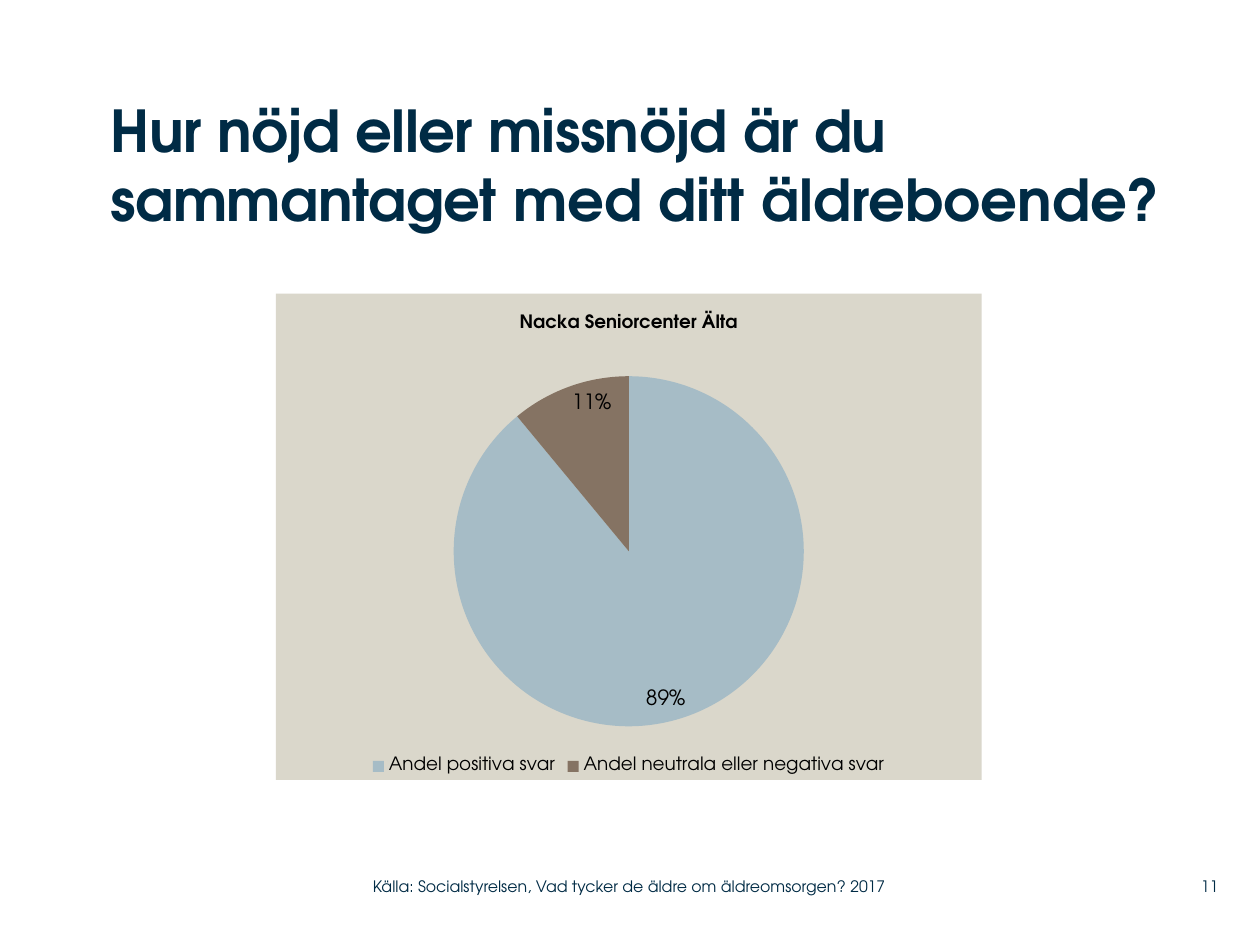
from dataclasses import dataclass

from lxml.etree import SubElement
from pptx import Presentation
from pptx.chart.data import CategoryChartData
from pptx.dml.color import RGBColor
from pptx.enum.chart import XL_CHART_TYPE, XL_LABEL_POSITION, XL_LEGEND_POSITION
from pptx.enum.text import MSO_ANCHOR, PP_ALIGN
from pptx.oxml.ns import qn
from pptx.slide import Slide
from pptx.text.text import Font
from pptx.util import Inches, Pt

NAVY = RGBColor(0x00, 0x2B, 0x45)
BLACK = RGBColor(0x00, 0x00, 0x00)
SAND = RGBColor(0xDA, 0xD7, 0xCB)
POSITIVE_BLUE = RGBColor(0xA6, 0xBC, 0xC6)
NEGATIVE_BROWN = RGBColor(0x85, 0x73, 0x63)
FONT_NAME = "TeX Gyre Adventor"


@dataclass
class Label:
    """A block of text made of spans, each with its letter spacing in points."""

    spans: list[tuple[str, float]]
    left: float
    top: float
    width: float
    height: float
    size: float
    bold: bool = False
    anchor: MSO_ANCHOR = MSO_ANCHOR.MIDDLE
    align: PP_ALIGN = PP_ALIGN.LEFT


@dataclass
class Answer:
    """One slice of the pie."""

    name: str
    share: int
    color: RGBColor


LABELS = [
    Label([("Hur nöjd eller missnöjd är du sammantaget ", -0.3),
           ("med ditt äldreboende?", 0)],
          0.88, 0.75, 8.83, 1.42, 33, bold=True, anchor=MSO_ANCHOR.TOP),
    Label([("Källa: Socialstyrelsen, Vad tycker de äldre om äldreomsorgen? 2017", 0)],
          2.96, 6.89, 4.43, 0.29, 9),
    Label([("11", 0)], 9.2, 6.89, 0.47, 0.29, 9, align=PP_ALIGN.RIGHT),
]
ANSWERS = [
    Answer("Andel positiva svar", 89, POSITIVE_BLUE),
    Answer("Andel neutrala eller negativa svar", 11, NEGATIVE_BROWN),
]


def style_font(font: Font, size: float, color: RGBColor, bold: bool = False) -> None:
    """Apply the common typeface with a size, colour and weight."""
    font.name = FONT_NAME
    font.size = Pt(size)
    font.bold = bold
    font.color.rgb = color


def add_label(page: Slide, label: Label) -> None:
    """Place a text box without margins."""
    box = page.shapes.add_textbox(Inches(label.left), Inches(label.top),
                                  Inches(label.width), Inches(label.height))
    frame = box.text_frame
    frame.word_wrap = True
    frame.vertical_anchor = label.anchor
    frame.margin_left = frame.margin_right = Inches(0)
    frame.margin_top = frame.margin_bottom = Inches(0)
    para = frame.paragraphs[0]
    para.alignment = label.align
    for text, spacing in label.spans:
        span = para.add_run()
        span.text = text
        style_font(span.font, label.size, NAVY, label.bold)
        if spacing:
            span._r.get_or_add_rPr().set("spc", str(round(spacing * 100)))


def add_answer_pie(page: Slide, answers: list[Answer]) -> None:
    """Draw the pie of answers on a sand background."""
    data = CategoryChartData()
    data.categories = [answer.name for answer in answers]
    data.add_series("Series 1", [answer.share for answer in answers])
    chart = page.shapes.add_chart(XL_CHART_TYPE.PIE, Inches(2.19), Inches(2.33),
                                  Inches(5.6), Inches(3.86), data).chart
    style_font(chart.font, 18, BLACK)

    chart.has_title = True
    title = chart.chart_title
    title.include_in_layout = False
    title.text_frame.text = "Nacka Seniorcenter Älta"
    style_font(title.text_frame.paragraphs[0].runs[0].font, 10.5, BLACK, bold=True)

    chart.has_legend = True
    chart.legend.position = XL_LEGEND_POSITION.BOTTOM
    chart.legend.include_in_layout = False
    style_font(chart.legend.font, 10.5, BLACK)

    plot = chart.plots[0]
    plot.vary_by_categories = True
    for index, answer in enumerate(answers):
        fill = plot.series[0].points[index].format.fill
        fill.solid()
        fill.fore_color.rgb = answer.color
    plot.has_data_labels = True
    labels = plot.data_labels
    labels.show_percentage = True
    labels.show_value = False
    labels.number_format = "0%"
    labels.number_format_is_linked = False
    labels.position = XL_LABEL_POSITION.INSIDE_END
    style_font(labels.font, 12, BLACK)

    place_plot(chart._chartSpace, 0.25, 0.17, 0.5, 0.72)
    fill_background(chart._chartSpace, SAND)


def place_plot(space, left: float, top: float, width: float, height: float) -> None:
    """Fix the inner plot area as fractions of the chart."""
    area = space.chart.plotArea
    for old in area.findall(qn("c:layout")):
        area.remove(old)
    layout = SubElement(area, qn("c:layout"))
    area.insert(0, layout)
    manual = SubElement(layout, qn("c:manualLayout"))
    settings = {"layoutTarget": "inner", "xMode": "edge", "yMode": "edge",
                "x": left, "y": top, "w": width, "h": height}
    for name, value in settings.items():
        SubElement(manual, qn(f"c:{name}")).set("val", str(value))


def fill_background(space, color: RGBColor) -> None:
    """Fill the chart area and remove its outline."""
    properties = SubElement(space, qn("c:spPr"))
    space.chart.addnext(properties)
    fill = SubElement(properties, qn("a:solidFill"))
    SubElement(fill, qn("a:srgbClr")).set("val", str(color))
    SubElement(SubElement(properties, qn("a:ln")), qn("a:noFill"))


def main() -> None:
    """Build the survey slide and save it."""
    deck = Presentation()
    deck.slide_width = Inches(10)
    deck.slide_height = Inches(7.5)
    page = deck.slides.add_slide(deck.slide_layouts[6])
    for label in LABELS:
        add_label(page, label)
    add_answer_pie(page, ANSWERS)
    deck.save("out.pptx")


if __name__ == "__main__":
    main()
